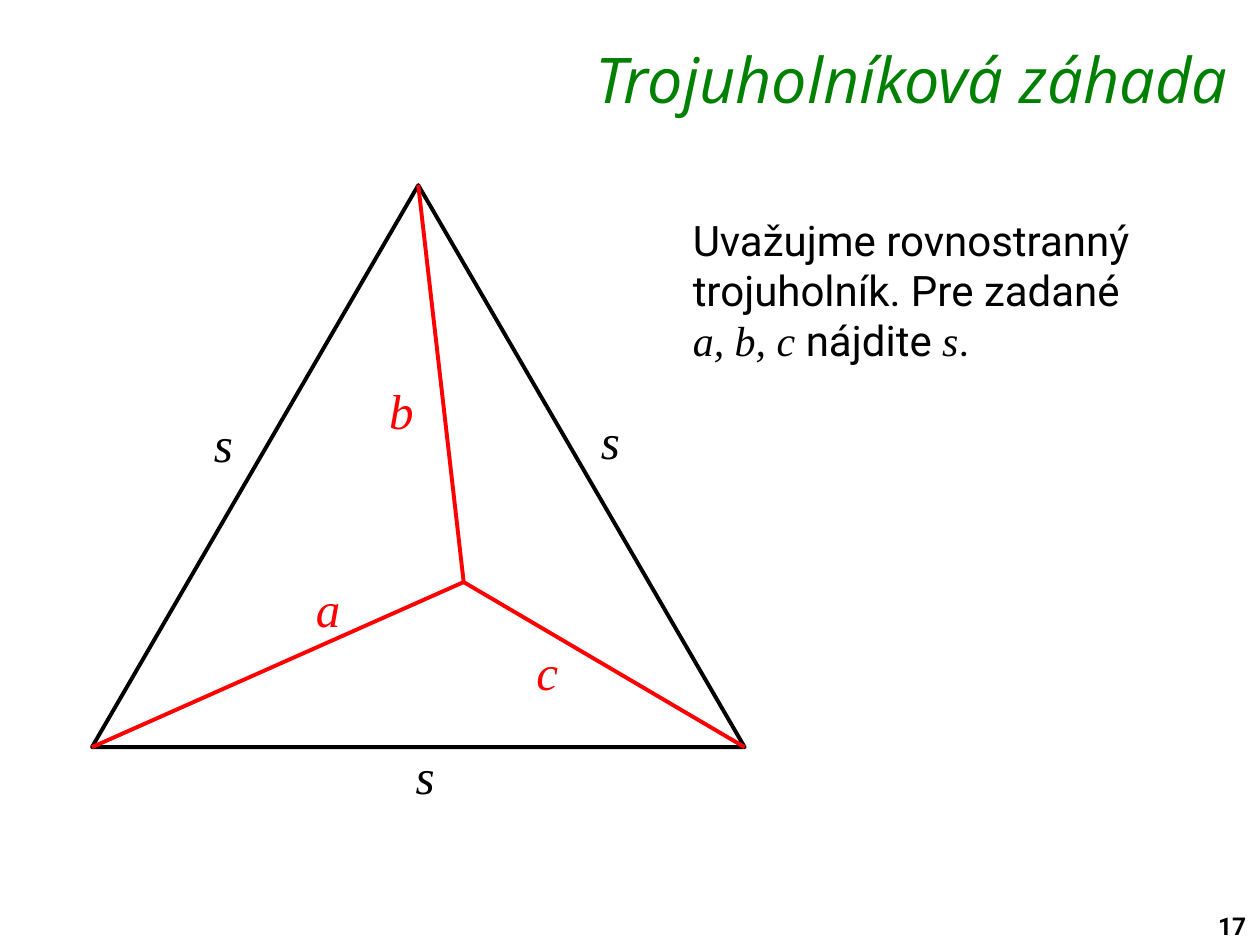
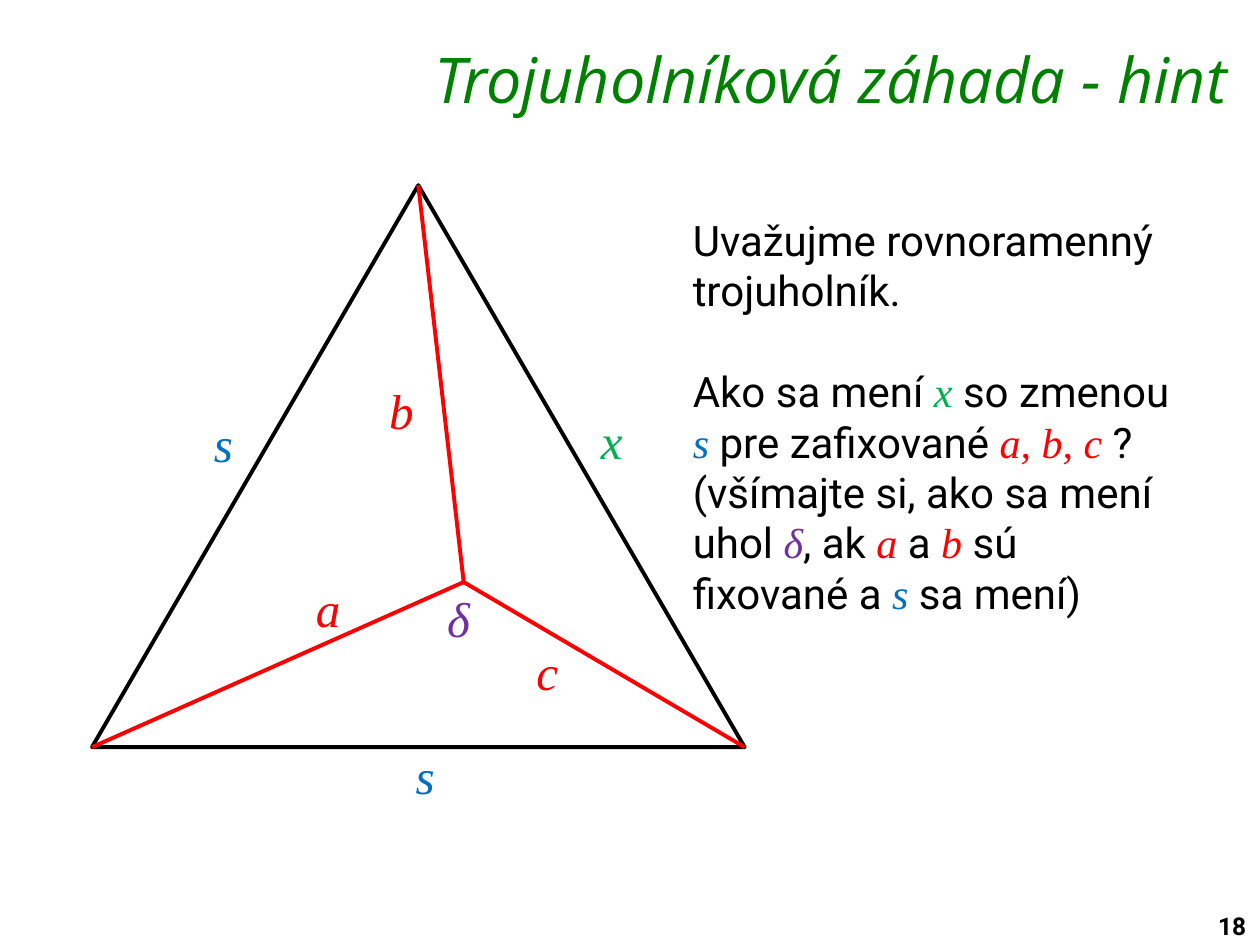
from dataclasses import dataclass
from pptx import Presentation
from pptx.dml.color import RGBColor
from pptx.enum.shapes import MSO_CONNECTOR, MSO_SHAPE
from pptx.enum.text import MSO_ANCHOR, PP_ALIGN
from pptx.oxml.ns import qn
from pptx.util import Inches, Pt
from lxml.etree import SubElement


@dataclass(frozen=True)
class Theme:
    black: str = "000000"
    title: str = "008000"
    red: str = "FF0000"
    blue: str = "0070C0"
    green: str = "00B050"
    purple: str = "7030A0"
    title_font: str = "Open Sans"
    body_font: str = "Roboto"
    math_font: str = "Times New Roman"
    title_size: int = 36
    label_size: int = 28
    body_size: int = 24
    number_size: int = 14
    paragraph_gap: int = 29
    line_width: float = 2.25


@dataclass(frozen=True)
class Box:
    x: float
    y: float
    w: float
    h: float

    def at(self, dx, dy):
        return self.x + dx, self.y + dy


T = Theme()
WIDTH, HEIGHT = Inches(10), Inches(7.5)
COLUMNS, ROWS = 100, 75
TITLE = Box(22.9, 3.1, 75.5, 5.8)
FIGURE = Box(7.3, 14.7, 51.8, 44.6)
NUMBER = Box(95.7, 71.8, 4.3, 3.2)
LABEL_SIZE = 3.6, 5.7
INNER_POINT = 29.5, 31.5
CORNERS = (0, FIGURE.h), (FIGURE.w / 2, 0), (FIGURE.w, FIGURE.h)
INNER_LABELS = [("a", T.red, 16.8, 30.7), ("b", T.red, 22.6, 15), ("c", T.red, 34.3, 35.7)]
SIDE_SPOTS = [(24.7, 44), (39.4, 17.4), (8.7, 17.6)]


def col(n):
    return round(WIDTH * n / COLUMNS)


def row(n):
    return round(HEIGHT * n / ROWS)


def add_text_box(s, box):
    sp = s.shapes.add_textbox(col(box.x), row(box.y), col(box.w), row(box.h))
    tf = sp.text_frame
    tf.word_wrap = True
    tf.vertical_anchor = MSO_ANCHOR.TOP
    return tf


def add_run(p, text, font, size, color, bold=False, italic=False):
    r = p.add_run()
    r.text = text
    r.font.name = font
    r.font.size = Pt(size)
    r.font.color.rgb = RGBColor.from_string(color)
    r.font.bold = bold
    r.font.italic = italic


def add_title(s, box, text):
    tf = add_text_box(s, box)
    tf.margin_top, tf.margin_bottom = Inches(0.01), 0
    p = tf.paragraphs[0]
    p.alignment = PP_ALIGN.RIGHT
    add_run(p, text, T.title_font, T.title_size, T.title, italic=True)


def add_number(s, box, number):
    p = add_text_box(s, box).paragraphs[0]
    add_run(p, str(number), T.body_font, T.number_size, T.black, bold=True)


def add_label(s, box, text, color, dx, dy):
    tf = add_text_box(s, Box(*box.at(dx, dy), *LABEL_SIZE))
    tf.margin_right = 0
    add_run(tf.paragraphs[0], text, T.math_font, T.label_size, color, italic=True)


def set_line(line, color):
    line.color.rgb = RGBColor.from_string(color)
    line.width = Pt(T.line_width)


def add_segment(s, box, start, end):
    (x1, y1), (x2, y2) = box.at(*start), box.at(*end)
    sp = s.shapes.add_connector(MSO_CONNECTOR.STRAIGHT, col(x1), row(y1), col(x2), row(y2))
    set_line(sp.line, T.red)
    SubElement(sp._element.spPr, qn("a:effectLst"))


def add_figure(s, box, sides, extra_labels):
    sp = s.shapes.add_shape(
        MSO_SHAPE.ISOSCELES_TRIANGLE, col(box.x), row(box.y), col(box.w), row(box.h))
    sp.shadow.inherit = False
    sp.fill.background()
    set_line(sp.line, T.black)
    for corner in CORNERS:
        add_segment(s, box, INNER_POINT, corner)
    side_labels = [(*side, *spot) for side, spot in zip(sides, SIDE_SPOTS)]
    for label in INNER_LABELS + side_labels + extra_labels:
        add_label(s, box, *label)


def add_body(s, box, paragraphs):
    tf = add_text_box(s, box)
    for i, (gap, runs) in enumerate(paragraphs):
        p = tf.add_paragraph() if i else tf.paragraphs[0]
        p.space_before = Pt(gap)
        for run in runs:
            if isinstance(run, str):
                add_run(p, run, T.body_font, T.body_size, T.black)
            else:
                text, color = run
                add_run(p, text, T.math_font, T.body_size, color, italic=True)


def add_triangle_slide(prs, number, title, sides, body_box, body, extra_labels):
    s = prs.slides.add_slide(prs.slide_layouts[6])
    add_number(s, NUMBER, number)
    add_title(s, TITLE, title)
    add_figure(s, FIGURE, sides, extra_labels)
    add_body(s, body_box, body)


def main():
    prs = Presentation()
    prs.slide_width, prs.slide_height = WIDTH, HEIGHT
    add_triangle_slide(
        prs, 17, "Trojuholníková záhada", [("s", T.black)] * 3,
        Box(54, 16.5, 37.3, 13.1),
        [(0, ["Uvažujme rovnostranný trojuholník. Pre zadané ", ("a, b, c", T.black),
              " nájdite ", ("s", T.black), "."])],
        [])
    add_triangle_slide(
        prs, 18, "Trojuholníková záhada - hint",
        [("s", T.blue), ("x", T.green), ("s", T.blue)],
        Box(54, 16.5, 40.8, 33.3),
        [(0, ["Uvažujme rovnoramenný trojuholník."]),
         (T.paragraph_gap, ["Ako sa mení ", ("x ", T.green), "so zmenou ", ("s ", T.blue),
                            "pre zafixované ", ("a, b, c ", T.red), "?"]),
         (0, ["(všímajte si, ako sa mení uhol ", ("δ", T.purple), ", ak ", ("a ", T.red),
              "a ", ("b", T.red), " sú fixované a ", ("s", T.blue), " sa mení)"])],
        [("δ", T.purple, 27.2, 31.5)])
    prs.save("out.pptx")


if __name__ == "__main__":
    main()
